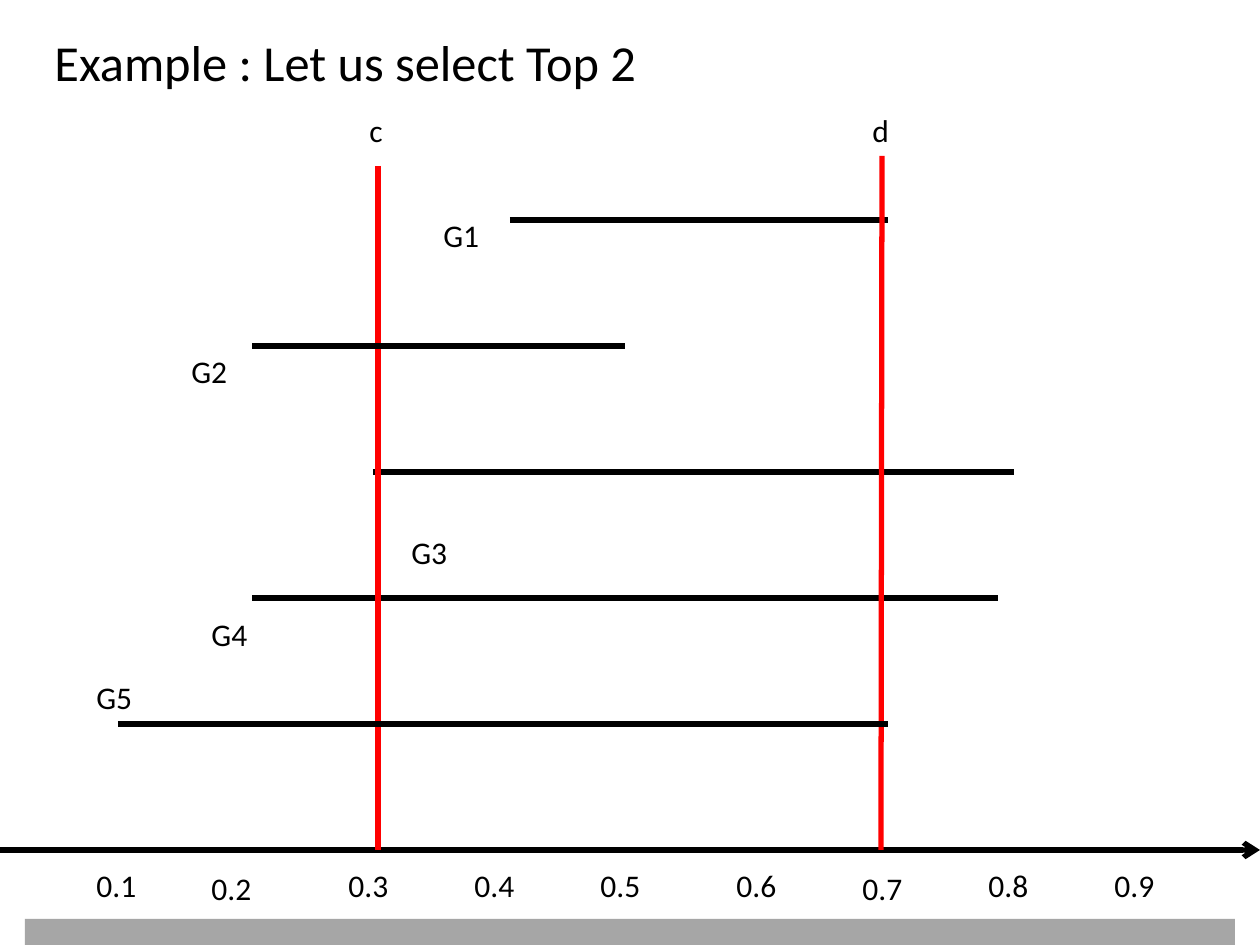
import pptx
import pptx.util
import pptx.dml.color
import pptx.enum.shapes
import pptx.enum.text
import pptx.oxml
import pptx.oxml.ns
from dataclasses import dataclass

PX = 914400 / 126
UNIT = 126  # px for one step of 0.1, and between interval rows


@dataclass(frozen=True)
class Theme:
    font: str = "Calibri"
    title_size: float = 28.8
    label_size: float = 18
    line_width: float = 3
    ink: str = "000000"
    threshold: str = "FF0000"
    footer: str = "A6A6A6"


THEME = Theme()


def px(n):
    return pptx.util.Emu(round(n * PX))


def rgb(value):
    return pptx.dml.color.RGBColor.from_string(value)


def add_text(shapes, text, x, y, w, h, size=THEME.label_size, wrap=False):
    s = shapes.add_textbox(px(x), px(y), px(w), px(h))
    tf = s.text_frame
    tf.text = text
    tf.word_wrap = wrap
    tf.vertical_anchor = pptx.enum.text.MSO_ANCHOR.TOP
    r = tf.paragraphs[0].runs[0]
    r.font.name = THEME.font
    r.font.size = pptx.util.Pt(size)
    r.font.color.rgb = rgb(THEME.ink)
    return s


def add_line(shapes, x1, y1, x2, y2, color=THEME.ink, arrow=False):
    s = shapes.add_connector(pptx.enum.shapes.MSO_CONNECTOR.STRAIGHT,
                             px(x1), px(y1), px(x2), px(y2))
    s.line.color.rgb = rgb(color)
    s.line.width = pptx.util.Pt(THEME.line_width)
    if arrow:
        tail = pptx.oxml.ns.qn("a:tailEnd")
        s.line._get_or_add_ln().append(
            s._element.makeelement(tail, {"type": "arrow"}))
    effects = pptx.oxml.ns.qn("a:effectLst")
    s._element.spPr.append(s._element.makeelement(effects, {}))


def add_title(shapes, x, y, w, h):
    s = add_text(shapes, "Example : Let us select Top 2", x, y, w, h,
                 THEME.title_size, wrap=True)
    s.text_frame.margin_top = px(10)


def add_footer(shapes, x, y, w, h):
    s = shapes.add_shape(pptx.enum.shapes.MSO_SHAPE.RECTANGLE,
                         px(x), px(y), px(w), px(h))
    s.shadow.inherit = False
    s.fill.solid()
    s.fill.fore_color.rgb = rgb(THEME.footer)
    s.line.fill.background()


def add_axis(shapes, x, y, w):
    add_line(shapes, x, y, x + w, y, arrow=True)
    # Tick labels: left edge and drop below the axis
    ticks = [(84, 10), (199, 13), (336, 10), (462, 10), (588, 10),
             (724, 10), (850, 13), (976, 10), (1102, 10)]
    for i, (left, drop) in enumerate(ticks, 1):
        add_text(shapes, f"0.{i}", x + left, y + drop, 84, 50, wrap=True)


def add_intervals(shapes, x, y, rows):
    # Each row: step, name, label left and top, then line segments
    for step, name, left, top, segments in rows:
        row_y = y + step * UNIT
        for start, end in segments:
            add_line(shapes, x + start, row_y, x + end, row_y)
        add_text(shapes, name, x + left, y + top, 68, 50)


def add_threshold(shapes, name, label_x, label_y, x1, y1, x2, y2):
    group = shapes.add_group_shape()
    add_text(group.shapes, name, label_x, label_y, 42, 50)
    add_line(group.shapes, x1, y1, x2, y2, THEME.threshold)


def main():
    prs = pptx.Presentation()
    prs.slide_width, prs.slide_height = px(1260), px(945)
    shapes = prs.slides.add_slide(prs.slide_layouts[6]).shapes

    # Frame
    add_footer(shapes, 25, 919, 1210, 26)
    add_title(shapes, 42, 21, 976, 63)

    # Number line
    add_axis(shapes, 0, 850, 1260)

    # Intervals behind the thresholds
    add_intervals(shapes, 0, 220, [
        (0, "G1", 431, -10, [(510, 888), (756, 882)]),
        (2, "G3", 399, 307, [(373, 1014), (882, 1008)]),
        (3, "G4", 199, 389, [(252, 998), (510, 762)]),
    ])

    # Thresholds
    add_threshold(shapes, "c", 357, 105, 378, 166, 378, 850)
    add_threshold(shapes, "d", 860, 105, 882, 156, 881, 850)

    # Intervals in front of the thresholds
    add_intervals(shapes, 0, 220, [
        (1, "G2", 179, 126, [(258, 625), (252, 504)]),
        (4, "G5", 84, 452, [(123, 888), (118, 262)]),
    ])

    prs.save("out.pptx")


if __name__ == "__main__":
    main()
